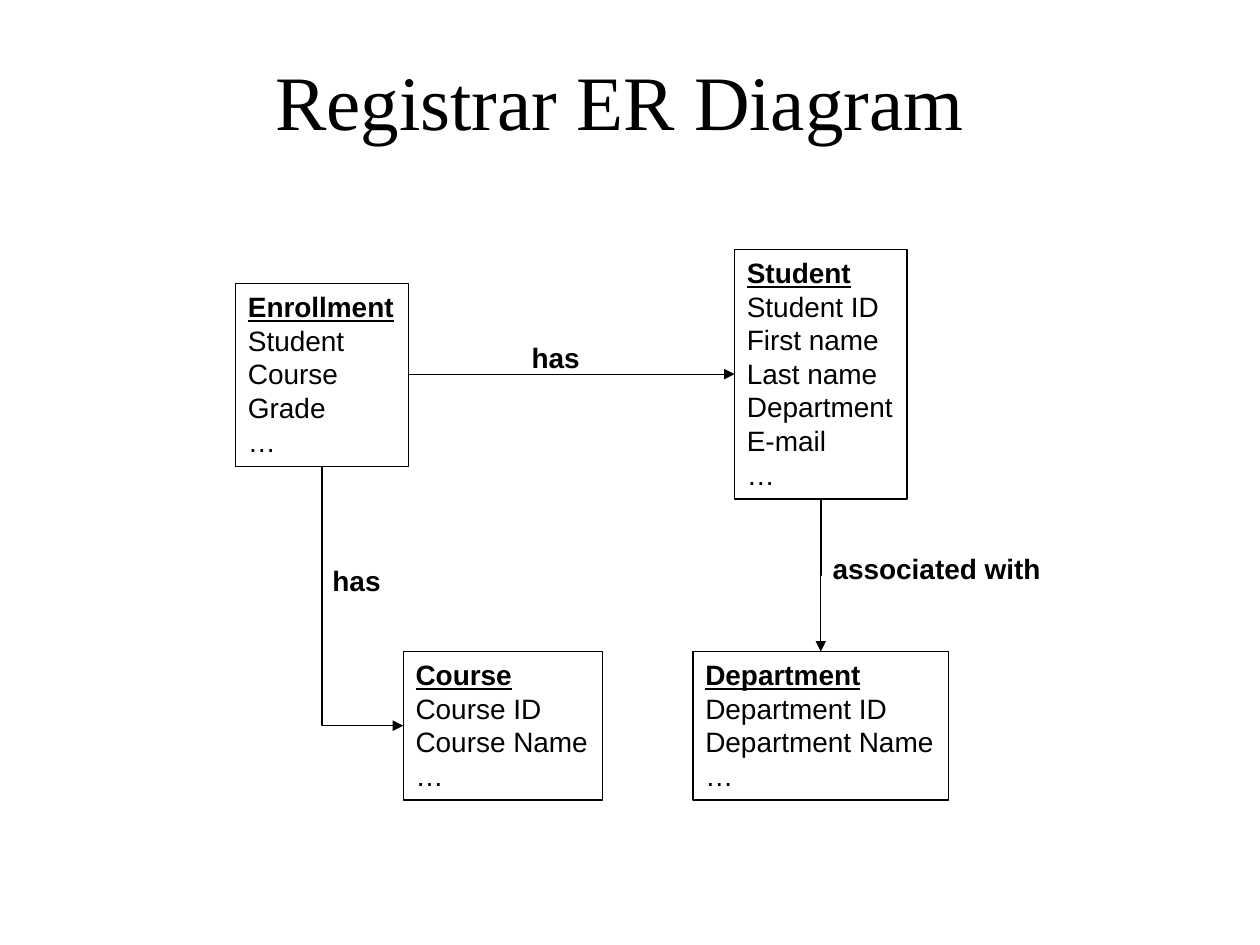
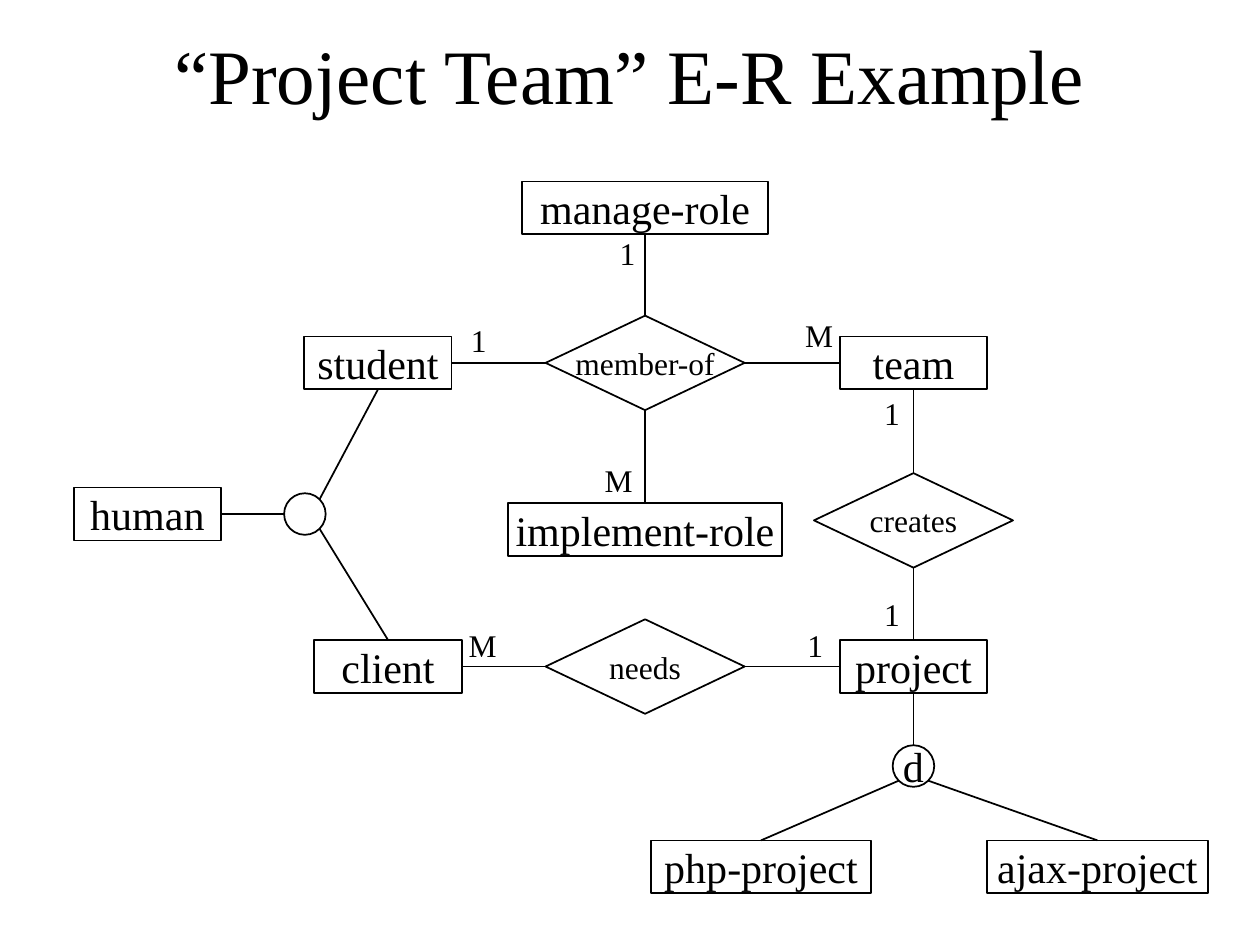
"""Build two entity-relationship diagram slides: a registrar and a project team."""
import dataclasses

import pptx
import pptx.dml.color
import pptx.enum.shapes
import pptx.enum.text
import pptx.oxml
import pptx.oxml.ns
import pptx.util

Inches = pptx.util.Inches
Pt = pptx.util.Pt
SHAPE = pptx.enum.shapes.MSO_SHAPE
CONNECTOR = pptx.enum.shapes.MSO_CONNECTOR
ALIGN = pptx.enum.text.PP_ALIGN
ANCHOR = pptx.enum.text.MSO_ANCHOR
AUTO_SIZE = pptx.enum.text.MSO_AUTO_SIZE


@dataclasses.dataclass(frozen=True)
class Theme:
    ink: pptx.dml.color.RGBColor = pptx.dml.color.RGBColor(0, 0, 0)
    serif: str = "Times New Roman"
    sans: str = "Arial"
    title: int = 44
    entity: int = 24
    relation: int = 18
    registrar: int = 16
    thin: float = 0.75
    line: float = 1


THEME = Theme()

REGISTRAR_TITLE = ("Registrar ER Diagram", (0.67, 0.17, 8.5, 1.25))
REGISTRAR_TABLES = {
    "Enrollment": ((1.87, 2.25, 1.37, 1.45), ["Student", "Course", "Grade", "…"]),
    "Student": ((5.83, 1.98, 1.37, 1.98),
                ["Student ID", "First name", "Last name", "Department", "E-mail", "…"]),
    "Course": ((3.2, 5.17, 1.58, 1.18), ["Course ID", "Course Name", "…"]),
    "Department": ((5.5, 5.17, 2.03, 1.18), ["Department ID", "Department Name", "…"]),
}
REGISTRAR_ARROWS = [
    ("Enrollment", "right", "Student", "left"),
    ("Enrollment", "bottom", "Course", "left"),
    ("Student", "bottom", "Department", "top"),
]
REGISTRAR_LABELS = [
    ("has", (4.12, 2.65, 0.58, 0.37)),
    ("has", (2.54, 4.42, 0.58, 0.37)),
    ("associated with", (6.51, 4.33, 1.86, 0.37)),
]

TEAM_TITLE = ("“Project Team” E-R Example", (0.75, 0.25, 8.5, 0.67))
LEFT, MIDDLE, RIGHT = 3, 5.12, 7.25
UPPER, LOWER, LEAF = 2.88, 5.29, 6.88
HUMAN_ROW = 4.08
ENTITY_HEIGHT = 0.42
ENTITIES = {
    "student": (LEFT, UPPER, 1.17),
    "team": (RIGHT, UPPER, 1.17),
    "implement-role": (MIDDLE, 4.2, 2.17),
    "project": (RIGHT, LOWER, 1.17),
    "manage-role": (MIDDLE, 1.65, 1.95),
    "php-project": (6.04, LEAF, 1.75),
    "ajax-project": (8.71, LEAF, 1.75),
    "human": (1.17, HUMAN_ROW, 1.17),
    "client": (3.08, LOWER, 1.17),
}
RELATION_SIZE = (1.58, 0.75)
RELATIONS = {
    "member-of": (MIDDLE, UPPER),
    "creates": (RIGHT, 4.13),
    "needs": (MIDDLE, LOWER),
}
SPLIT_SIZE = (0.33, 0.33)
SPLITS = {"d": (RIGHT, 6.08), "": (2.42, HUMAN_ROW)}
TEAM_LINKS = [
    ("member-of", "left", "student", "right"),
    ("member-of", "right", "team", "left"),
    ("member-of", "bottom", "implement-role", "top"),
    ("member-of", "top", "manage-role", "bottom"),
    ("team", "bottom", "creates", "top"),
    ("creates", "bottom", "project", "top"),
    ("project", "bottom", "d", "top"),
    ("d", "bottom left", "php-project", "top"),
    ("d", "bottom right", "ajax-project", "top"),
    ("", "top right", "student", "bottom"),
    ("", "bottom right", "client", "top"),
    ("human", "right", "", "left"),
    ("needs", "right", "project", "left"),
    ("client", "right", "needs", "left"),
]
CARDINALITY_SIZES = {"1": (0.33, 0.4), "M": (0.42, 0.4)}
CARDINALITIES = [
    ("1", (4.98, 2.01)), ("M", (6.5, 2.66)), ("M", (4.91, 3.81)), ("1", (3.8, 2.7)),
    ("1", (7.08, 3.28)), ("1", (7.08, 4.87)), ("M", (3.83, 5.12)), ("1", (6.47, 5.12)),
]

SITES = ["top", "left", "bottom", "right"]
DIAGONAL = 0.35
OFFSETS = {
    "top": (0, -0.5), "left": (-0.5, 0), "bottom": (0, 0.5), "right": (0.5, 0),
    "top right": (DIAGONAL, -DIAGONAL), "bottom left": (-DIAGONAL, DIAGONAL),
    "bottom right": (DIAGONAL, DIAGONAL),
}


def inches(box):
    return [Inches(length) for length in box]


def centred(x, y, width, height):
    return x - width / 2, y - height / 2, width, height


def style_text(frame, font, size, align=ALIGN.LEFT, bold=False):
    for paragraph in frame.paragraphs:
        paragraph.alignment = align
        for run in paragraph.runs:
            run.font.name = font
            run.font.size = Pt(size)
            run.font.bold = bold
            run.font.color.rgb = THEME.ink


def add_titled_slide(deck, title, box):
    slide = deck.slides.add_slide(deck.slide_layouts[5])
    heading = slide.shapes.title
    heading.left, heading.top, heading.width, heading.height = inches(box)
    frame = heading.text_frame
    frame.text = title
    frame.auto_size = AUTO_SIZE.NONE
    frame.vertical_anchor = ANCHOR.MIDDLE
    style_text(frame, THEME.serif, THEME.title, ALIGN.CENTER)
    return slide


def add_outline(slide, kind, box, text, width):
    outline = slide.shapes.add_shape(kind, *inches(box))
    outline.shadow.inherit = False
    outline.fill.background()
    outline.line.color.rgb = THEME.ink
    outline.line.width = Pt(width)
    outline.text_frame.word_wrap = False
    if text:
        outline.text_frame.text = text
    return outline


def add_table_box(slide, name, box, fields):
    table_box = add_outline(slide, SHAPE.RECTANGLE, box, "\n".join([name, *fields]), THEME.thin)
    frame = table_box.text_frame
    frame.vertical_anchor = ANCHOR.TOP
    frame.auto_size = AUTO_SIZE.SHAPE_TO_FIT_TEXT
    style_text(frame, THEME.sans, THEME.registrar)
    heading = frame.paragraphs[0].runs[0].font
    heading.bold = heading.underline = True
    return table_box


def add_node(slide, kind, box, text, size):
    node = add_outline(slide, kind, box, text, THEME.line)
    node.text_frame.vertical_anchor = ANCHOR.MIDDLE
    style_text(node.text_frame, THEME.serif, size, ALIGN.CENTER)
    return node


def add_label(slide, text, box, *style):
    label = slide.shapes.add_textbox(*inches(box))
    label.text_frame.word_wrap = False
    label.text_frame.auto_size = AUTO_SIZE.SHAPE_TO_FIT_TEXT
    label.text_frame.text = text
    style_text(label.text_frame, *style)


def site_point(node, side):
    across, down = OFFSETS[side]
    return (round(node.left + node.width * (0.5 + across)),
            round(node.top + node.height * (0.5 + down)))


def add_link(slide, kind, source, exit_side, target, entry_side, width):
    start, end = site_point(source, exit_side), site_point(target, entry_side)
    link = slide.shapes.add_connector(kind, *start, *end)
    if source.auto_shape_type != SHAPE.OVAL:
        link.begin_connect(source, SITES.index(exit_side))
    if target.auto_shape_type != SHAPE.OVAL:
        link.end_connect(target, SITES.index(entry_side))
    link.line.color.rgb = THEME.ink
    link.line.width = Pt(width)
    link._element.spPr.append(pptx.oxml.parse_xml(
        f"<a:effectLst {pptx.oxml.ns.nsdecls('a')}/>"))
    return link


def turn_downward(link, single_bend):
    leftward = link.end_x < link.begin_x
    middle_x, middle_y = link.left + link.width // 2, link.top + link.height // 2
    link.width, link.height = link.height, link.width
    link.left, link.top = middle_x - link.width // 2, middle_y - link.height // 2
    properties = link._element.spPr
    frame = properties.find(pptx.oxml.ns.qn("a:xfrm"))
    frame.set("rot", "16200000")
    frame.set("flipH", "1")
    frame.set("flipV", str(int(leftward)))
    if single_bend:
        properties.find(pptx.oxml.ns.qn("a:prstGeom")).set("prst", "bentConnector2")


def add_arrow(slide, source, exit_side, target, entry_side):
    arrow = add_link(slide, CONNECTOR.ELBOW, source, exit_side, target, entry_side, THEME.thin)
    if exit_side == "bottom":
        turn_downward(arrow, entry_side == "left")
    arrow._element.spPr.find(pptx.oxml.ns.qn("a:ln")).append(pptx.oxml.parse_xml(
        f'<a:tailEnd {pptx.oxml.ns.nsdecls("a")} type="triangle"/>'))


def build_registrar(deck):
    slide = add_titled_slide(deck, *REGISTRAR_TITLE)
    tables = {name: add_table_box(slide, name, box, fields)
              for name, (box, fields) in REGISTRAR_TABLES.items()}
    for source, exit_side, target, entry_side in REGISTRAR_ARROWS:
        add_arrow(slide, tables[source], exit_side, tables[target], entry_side)
    for text, box in REGISTRAR_LABELS:
        add_label(slide, text, box, THEME.sans, THEME.registrar, ALIGN.LEFT, True)


def build_project_team(deck):
    slide = add_titled_slide(deck, *TEAM_TITLE)
    nodes = {}
    for name, (x, y, width) in ENTITIES.items():
        box = centred(x, y, width, ENTITY_HEIGHT)
        nodes[name] = add_node(slide, SHAPE.RECTANGLE, box, name, THEME.entity)
    for name, centre in RELATIONS.items():
        box = centred(*centre, *RELATION_SIZE)
        nodes[name] = add_node(slide, SHAPE.DIAMOND, box, name, THEME.relation)
    for name, centre in SPLITS.items():
        box = centred(*centre, *SPLIT_SIZE)
        nodes[name] = add_node(slide, SHAPE.OVAL, box, name, THEME.entity)
    for source, exit_side, target, entry_side in TEAM_LINKS:
        add_link(slide, CONNECTOR.STRAIGHT, nodes[source], exit_side,
                 nodes[target], entry_side, THEME.line)
    for text, centre in CARDINALITIES:
        add_label(slide, text, centred(*centre, *CARDINALITY_SIZES[text]),
                  THEME.serif, THEME.relation, ALIGN.CENTER)


def main():
    deck = pptx.Presentation()
    deck.slide_width, deck.slide_height = Inches(10), Inches(7.5)
    build_registrar(deck)
    build_project_team(deck)
    deck.save("out.pptx")


if __name__ == "__main__":
    main()
